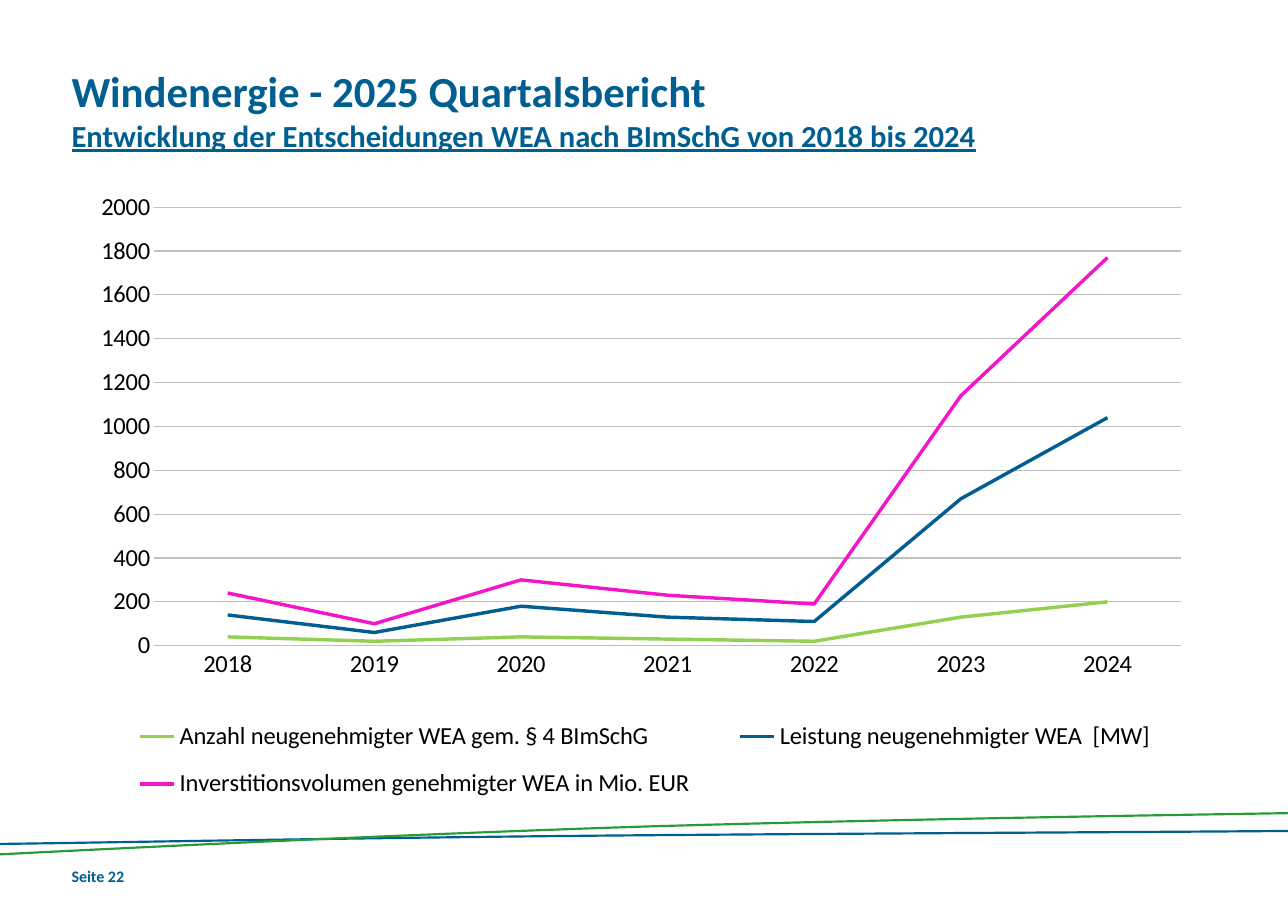
"""Builds the slide on wind energy permits from 2018 to 2024 as a line chart."""
from lxml import etree
from pptx import Presentation
from pptx.chart.data import CategoryChartData
from pptx.dml.color import RGBColor
from pptx.enum.chart import XL_CHART_TYPE, XL_LEGEND_POSITION, XL_TICK_MARK
from pptx.oxml.ns import qn
from pptx.util import Cm, Pt

COLORS = {
    "blue": "005E90",
    "green": "289B38",
    "lime": "92D050",
    "pink": "F216C8",
    "grid": "BFBFBF",
    "black": "000000",
}
FONT = "Calibri"


def style_font(font, size, color, bold=False):
    font.name = FONT
    font.size = Pt(size)
    font.bold = bold
    font.color.rgb = RGBColor.from_string(COLORS[color])


def set_layout(parent, index, **values):
    for old_layout in parent.findall(qn("c:layout")):
        parent.remove(old_layout)
    layout = etree.Element(qn("c:layout"))
    manual = etree.SubElement(layout, qn("c:manualLayout"))
    for tag, value in values.items():
        etree.SubElement(manual, qn(f"c:{tag}")).set("val", str(value))
    parent.insert(index, layout)


presentation = Presentation()
presentation.slide_width = Cm(29.7)
presentation.slide_height = Cm(21)
slide = presentation.slides.add_slide(presentation.slide_layouts[6])

wave_x = [0, 1.78, 8.66, 14.83, 20.96, 27.91, 29.7]
waves = [
    ("blue", [19.43, 19.41, 19.28, 19.23, 19.18, 19.15, 19.13]),
    ("green", [19.67, 19.58, 19.23, 19.03, 18.85, 18.75, 18.72]),
]
wave_thickness = 0.05
for color, wave_y in waves:
    edge = list(zip(wave_x, wave_y))
    outline = edge + [(x, y + wave_thickness) for x, y in reversed(edge)]
    points = [(Cm(x), Cm(y)) for x, y in outline]
    builder = slide.shapes.build_freeform(*points[0])
    builder.add_line_segments(points[1:], close=True)
    shape = builder.convert_to_shape()
    segments = list(shape.element.iter(qn("a:lnTo")))
    for start in (0, 3, 7, 10):
        curve = etree.Element(qn("a:cubicBezTo"))
        segments[start].addprevious(curve)
        for segment in segments[start:start + 3]:
            curve.append(segment[0])
            segment.getparent().remove(segment)
    shape.shadow.inherit = False
    shape.fill.solid()
    shape.fill.fore_color.rgb = RGBColor.from_string(COLORS[color])
    shape.line.fill.background()

text_boxes = [
    ((1.65, 1.5, 26.4, 2.7), [
        ("Windenergie - 2025 Quartalsbericht", 28, False),
        ("Entwicklung der Entscheidungen WEA nach BImSchG von 2018 bis 2024", 20, True),
    ]),
    ((1.65, 19.98, 1.8, 0.64), [("Seite 22", 10.5, False)]),
]
for box, lines in text_boxes:
    text_frame = slide.shapes.add_textbox(*map(Cm, box)).text_frame
    text_frame.word_wrap = True
    text_frame.margin_left = text_frame.margin_right = 0
    text_frame.margin_top = text_frame.margin_bottom = 0
    text_frame.text = "\v".join(text for text, size, underline in lines)
    for run, (text, size, underline) in zip(text_frame.paragraphs[0].runs, lines):
        style_font(run.font, size, "blue", bold=True)
        run.font.underline = underline

series_rows = [
    ("Anzahl neugenehmigter WEA gem. § 4 BImSchG", "lime",
     [40, 20, 40, 30, 20, 130, 200]),
    ("Leistung neugenehmigter WEA  [MW]", "blue",
     [140, 60, 180, 130, 110, 670, 1040]),
    ("Inverstitionsvolumen genehmigter WEA in Mio. EUR", "pink",
     [240, 100, 300, 230, 190, 1140, 1770]),
]
chart_data = CategoryChartData()
chart_data.categories = [str(year) for year in range(2018, 2025)]
for name, color, values in series_rows:
    chart_data.add_series(name, values)
chart = slide.shapes.add_chart(
    XL_CHART_TYPE.LINE, Cm(1.72), Cm(3.72), Cm(26.3), Cm(15.09), chart_data
).chart
chart.has_title = False
style_font(chart.font, 16, "black")
chart.plots[0].vary_by_categories = False
for series, (name, color, values) in zip(chart.plots[0].series, series_rows):
    series.smooth = False
    series.format.line.width = Pt(2.25)
    series.format.line.color.rgb = RGBColor.from_string(COLORS[color])

value_axis = chart.value_axis
value_axis.minimum_scale = 0
value_axis.maximum_scale = 2000
value_axis.major_unit = 200
value_axis.has_major_gridlines = True
value_axis.format.line.fill.background()
for axis in (value_axis, chart.category_axis):
    axis.major_tick_mark = XL_TICK_MARK.NONE
    axis.minor_tick_mark = XL_TICK_MARK.NONE
    style_font(axis.tick_labels.font, 16, "black")
for line in (value_axis.major_gridlines.format.line, chart.category_axis.format.line):
    line.width = Pt(0.75)
    line.color.rgb = RGBColor.from_string(COLORS["grid"])

chart.has_legend = True
legend = chart.legend
legend.position = XL_LEGEND_POSITION.BOTTOM
legend.include_in_layout = False
style_font(legend.font, 16, "black")
legend_element = chart.element.find(".//" + qn("c:legend"))
set_layout(legend_element, 1, xMode="edge", yMode="edge", x=0.02, y=0.83, w=0.96, h=0.17)
plot_area = chart.element.find(".//" + qn("c:plotArea"))
set_layout(plot_area, 0, layoutTarget="inner", xMode="edge", yMode="edge",
           x=0.07, y=0.07, w=0.9, h=0.67)

presentation.save("out.pptx")
